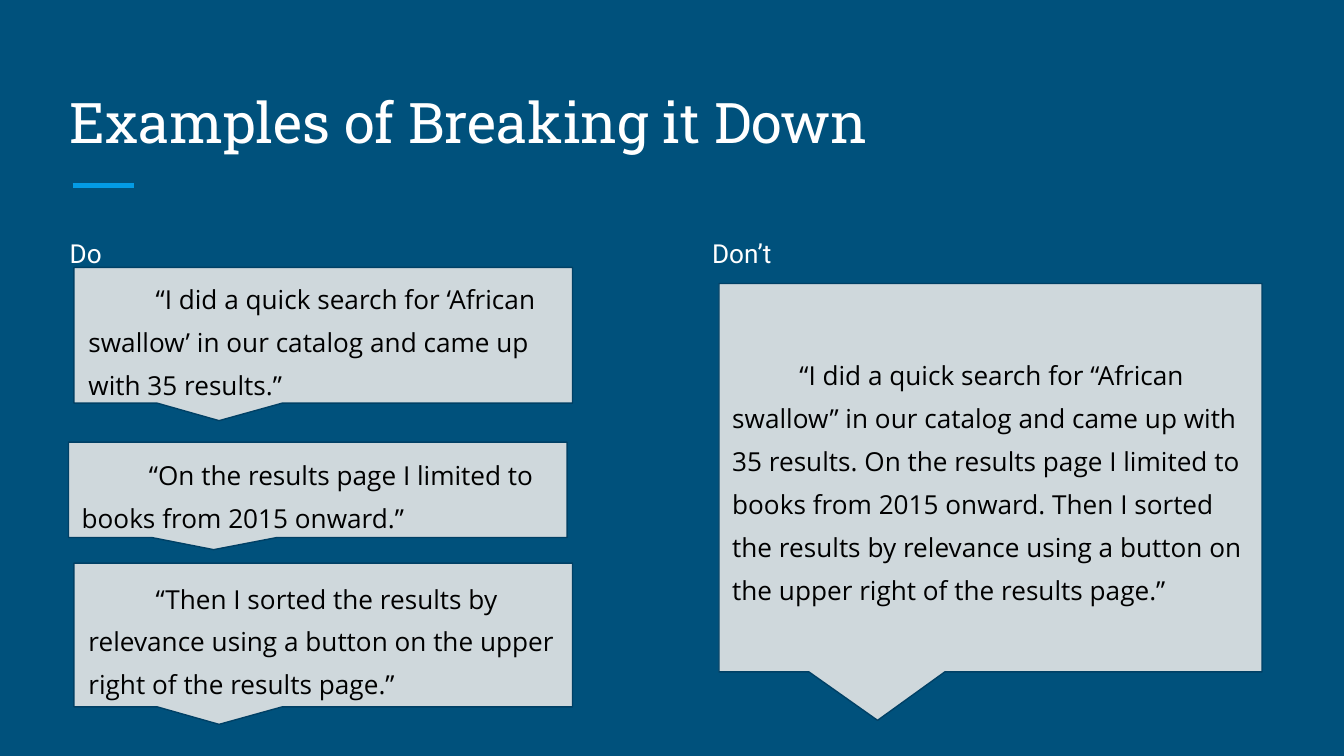
from dataclasses import dataclass

from lxml.etree import SubElement
from pptx import Presentation
from pptx.dml.color import RGBColor
from pptx.enum.shapes import MSO_CONNECTOR
from pptx.enum.text import MSO_ANCHOR, MSO_AUTO_SIZE, PP_ALIGN
from pptx.oxml.ns import qn
from pptx.util import Pt

SCALE = 9144


@dataclass(frozen=True)
class Theme:
    """Colours, fonts and type sizes of the slide."""
    back: str = "00517C"
    accent: str = "039BE5"
    light: str = "FFFFFF"
    dark: str = "000000"
    panel: str = "CFD8DC"
    edge: str = "004065"
    head: str = "Roboto Slab"
    label: str = "Roboto"
    quote: str = "Open Sans"
    large: int = 30
    small: int = 14


THEME = Theme()


def px(*values):
    """Turn px lengths into EMU."""
    return [round(value * SCALE) for value in values]


def rgb(code):
    """Turn a hex code into a colour."""
    return RGBColor.from_string(code)


def apply(target, values):
    """Set each attribute named in a dict."""
    for name, value in values.items():
        setattr(target, name, value)


def write(shapes, box, text, font, size, color, frame=None, para=None):
    """Place one paragraph of text in a box."""
    area = shapes.add_textbox(*px(*box)).text_frame
    inset, = px(10)
    sides = ("left", "top", "right", "bottom")
    apply(area, {f"margin_{side}": inset for side in sides})
    apply(area, {"word_wrap": True, "auto_size": MSO_AUTO_SIZE.NONE,
                 "vertical_anchor": MSO_ANCHOR.TOP, **(frame or {})})
    line = area.paragraphs[0]
    apply(line, {"alignment": PP_ALIGN.LEFT, **(para or {})})
    run = line.add_run()
    apply(run, {"text": text})
    apply(run.font, {"name": font, "size": Pt(size)})
    run.font.color.rgb = rgb(color)
    return line


def header(slide, box, text):
    """Place the title and the short accent rule under it."""
    left, top, width, height = box
    ends = px(left + 12, top + 88, left + 58, top + 88)
    rule = slide.shapes.add_connector(MSO_CONNECTOR.STRAIGHT, *ends)
    rule.line.color.rgb = rgb(THEME.accent)
    rule.line.width = Pt(3)
    SubElement(rule._element.spPr, qn("a:effectLst"))
    write(slide.shapes, box, text, THEME.head, THEME.large, THEME.light,
          {"vertical_anchor": MSO_ANCHOR.BOTTOM})


def bubble(slide, box, inner, text):
    """Place a speech bubble with its quote in an inner box."""
    left, top, width, height = box
    group = slide.shapes.add_group_shape()
    base = top + height * 8 / 9
    points = [(left + width, top), (left + width, base),
              (left + width * 5 / 12, base),
              (left + width * 7 / 24, top + height),
              (left + width / 6, base), (left, base)]
    pen = group.shapes.build_freeform(left, top, scale=SCALE)
    pen.add_line_segments(points, close=True)
    shape = pen.convert_to_shape()
    shape.shadow.inherit = False
    shape.fill.solid()
    shape.fill.fore_color.rgb = rgb(THEME.panel)
    shape.line.color.rgb = rgb(THEME.edge)
    shape.line.width = Pt(0.75)
    x, y, wide, high = inner
    line = write(group.shapes, (left + x, top + y, wide, high), text,
                 THEME.quote, THEME.small, THEME.dark,
                 {"vertical_anchor": MSO_ANCHOR.MIDDLE,
                  "auto_size": MSO_AUTO_SIZE.SHAPE_TO_FIT_TEXT},
                 {"line_spacing": 1.37, "space_before": Pt(6)})
    apply_indent = line._p.get_or_add_pPr().set
    apply_indent("marL", "0")
    apply_indent("indent", str(px(50)[0]))


def column(slide, box, label, quotes):
    """Place a label with its bubbles, each offset from the column box."""
    left, top, width, height = box
    write(slide.shapes, box, label, THEME.label, THEME.small, THEME.light,
          para={"line_spacing": 1.15, "space_before": Pt(12)})
    for (x, y, wide, high), inner, text in quotes:
        bubble(slide, (left + x, top + y, wide, high), inner, text)


DO = [
    ((13, 36, 371, 114), (1, -3, 370, 108),
     "“I did a quick search for ‘African swallow’ in our catalog "
     "and came up with 35 results.”"),
    ((9, 166, 371, 80), (0, -2, 370, 76),
     "“On the results page I limited to books from 2015 onward.”"),
    ((13, 256, 371, 120), (1, 0, 370, 108),
     "“Then I sorted the results by relevance using a button "
     "on the upper right of the results page.”"),
]
DONT = [
    ((15, 48, 404, 325), (0, 25, 403, 237),
     "“I did a quick search for “African swallow” in our catalog and came "
     "up with 35 results. On the results page I limited to books from 2015 "
     "onward. Then I sorted the results by relevance using a button on the "
     "upper right of the results page.”"),
]


def main():
    """Build the slide and save it."""
    deck = Presentation()
    deck.slide_width, deck.slide_height = px(1000, 562.5)
    slide = deck.slides.add_slide(deck.slide_layouts[6])
    fill = slide.background.fill
    fill.solid()
    fill.fore_color.rgb = rgb(THEME.back)
    header(slide, (42, 50, 915, 75), "Examples of Breaking it Down")
    column(slide, (42, 163, 437, 337), "Do", DO)
    column(slide, (520, 163, 437, 337), "Don’t", DONT)
    deck.save("out.pptx")


if __name__ == "__main__":
    main()
